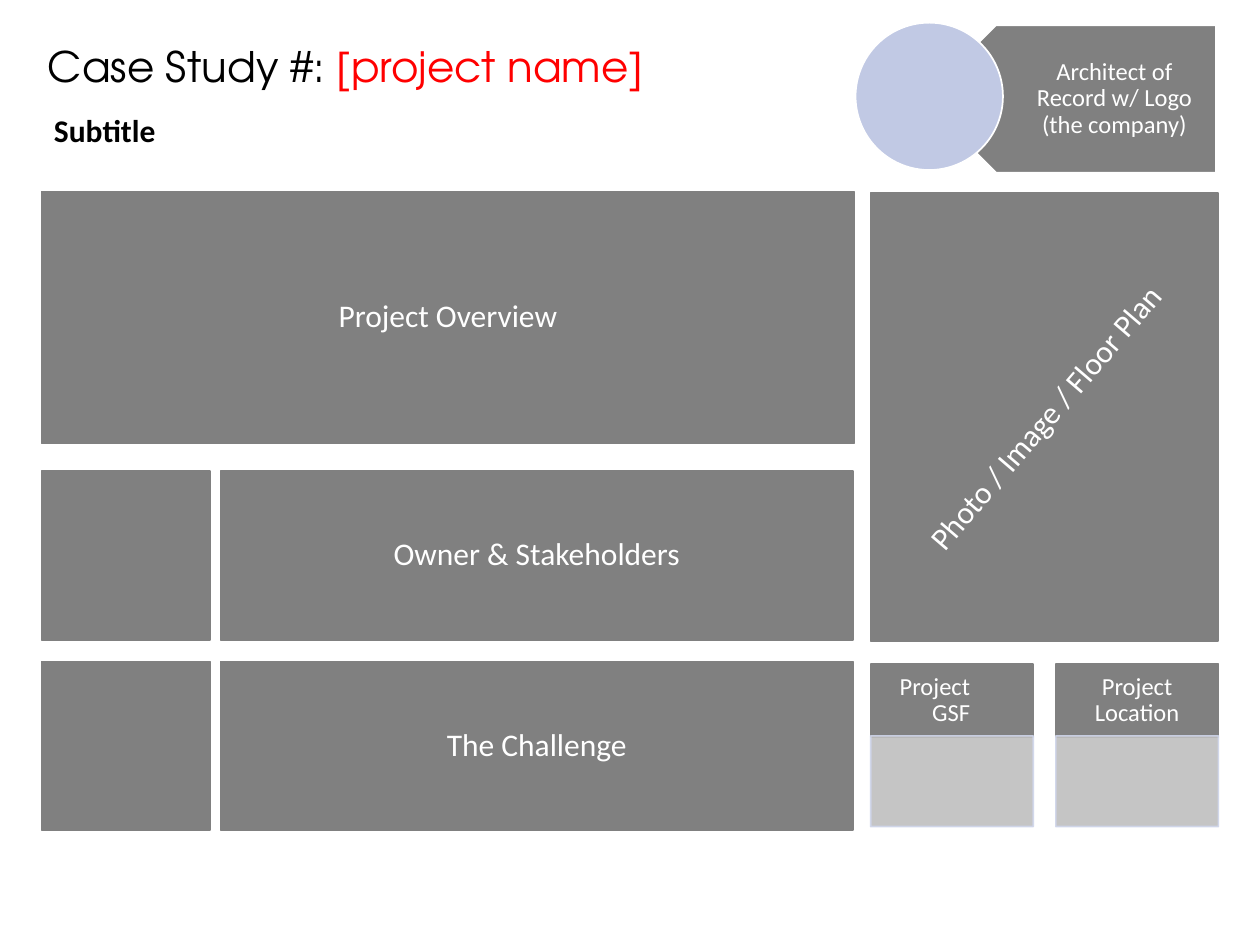
from lxml.etree import SubElement
from pptx import Presentation
from pptx.dml.color import RGBColor
from pptx.enum.shapes import MSO_SHAPE
from pptx.enum.text import MSO_ANCHOR, PP_ALIGN
from pptx.oxml.ns import qn
from pptx.util import Inches, Pt

COLORS = {
    "white": "FFFFFF",
    "black": "000000",
    "red": "FF0000",
    "panel": "808080",
    "value": "BFBFBF",
    "value_line": "CFD5EA",
    "logo": "C1C9E4",
}
WIDE_INSETS = (0.14, 0.14, 0.14, 0.14)


def color(name):
    return RGBColor.from_string(COLORS[name])


def set_opacity(fill, percent):
    color_element = fill._xPr.find(qn("a:solidFill"))[0]
    SubElement(color_element, qn("a:alpha")).set("val", str(percent * 1000))


def add_block(slide, box, fill="panel", line="panel", kind=MSO_SHAPE.RECTANGLE, opacity=100):
    shape = slide.shapes.add_shape(kind, *map(Inches, box))
    shape.shadow.inherit = False
    shape.fill.solid()
    shape.fill.fore_color.rgb = color(fill)
    if line:
        shape.line.color.rgb = color(line)
        shape.line.width = Pt(1)
    else:
        shape.line.fill.background()
    if opacity < 100:
        set_opacity(shape.fill, opacity)
        if line:
            set_opacity(shape.line.fill, opacity)
    return shape


def write_text(shape, runs, size, insets, font="Calibri", align=PP_ALIGN.CENTER,
               anchor=MSO_ANCHOR.MIDDLE, spacing=0.9, bold=False, wrap=True):
    frame = shape.text_frame
    frame.word_wrap = wrap
    frame.vertical_anchor = anchor
    frame.margin_left, frame.margin_top, frame.margin_right, frame.margin_bottom = map(Inches, insets)
    paragraph = frame.paragraphs[0]
    paragraph.alignment = align
    paragraph.line_spacing = spacing
    paragraph.font.size = Pt(size)
    paragraph.font.name = font
    paragraph.font.bold = bold
    for text, text_color in runs:
        run = paragraph.add_run()
        run.text = text
        run.font.color.rgb = color(text_color)


def add_heading(slide):
    title = add_block(slide, (0.18, 0.3, 6.32, 0.6), "white", None, opacity=70)
    write_text(title, [("Case Study #: ", "black"), ("[project name]", "red")], 24,
               (0.2, 0.1, 0, 0), "TeX Gyre Adventor", PP_ALIGN.LEFT, MSO_ANCHOR.TOP, 0.8)
    subtitle = add_block(slide, (0.33, 0.77, 5.52, 0.42), "white", None, opacity=70)
    write_text(subtitle, [("Subtitle", "black")], 18, (0.1, 0.1, 0.1, 0),
               align=PP_ALIGN.LEFT, spacing=1, bold=True)


def add_architect(slide):
    banner = add_block(slide, (7.32, 0.2, 2.33, 1.17), line="white", kind=MSO_SHAPE.PENTAGON)
    banner.rotation = 180
    label = slide.shapes.add_textbox(*map(Inches, (7.62, 0.2, 2.04, 1.17)))
    write_text(label, [("Architect of Record w/ Logo (the company)", "white")], 14,
               (0.52, 0.06, 0.11, 0.06))
    add_block(slide, (6.79, 0.18, 1.17, 1.17), "logo", "white", MSO_SHAPE.OVAL)


def add_sections(slide):
    overview = add_block(slide, (0.33, 1.52, 6.45, 2))
    write_text(overview, [("Project Overview", "white")], 18, (0.04, 0.03, 0.04, 0.03))
    for top, text in ((3.74, "Owner & Stakeholders"), (5.25, "The Challenge")):
        add_block(slide, (0.33, top, 1.34, 1.34))
        section = add_block(slide, (1.75, top, 5.02, 1.34))
        write_text(section, [(text, "white")], 18, WIDE_INSETS)


def add_fact(slide, left, text, align, right_inset):
    header = add_block(slide, (left, 5.27, 1.29, 0.58))
    write_text(header, [(text, "white")], 14, (0.11, 0.06, right_inset, 0.06), align=align)
    add_block(slide, (left, 5.84, 1.29, 0.72), "value", "value_line", opacity=90)


def add_photo_area(slide):
    add_block(slide, (6.91, 1.53, 2.76, 3.56))
    label = slide.shapes.add_textbox(*map(Inches, (6.78, 3.11, 3.02, 0.4)))
    label.rotation = 310.6
    write_text(label, [("Photo / Image / Floor Plan", "white")], 18,
               (0.1, 0.05, 0.1, 0.05), spacing=1, wrap=False)


def main():
    presentation = Presentation()
    presentation.slide_width = Inches(10)
    presentation.slide_height = Inches(7.5)
    slide = presentation.slides.add_slide(presentation.slide_layouts[6])
    add_heading(slide)
    add_architect(slide)
    add_sections(slide)
    add_fact(slide, 6.91, "Project GSF", PP_ALIGN.RIGHT, 0.5)
    add_fact(slide, 8.38, "Project Location", PP_ALIGN.CENTER, 0.11)
    add_photo_area(slide)
    presentation.save("out.pptx")


if __name__ == "__main__":
    main()
